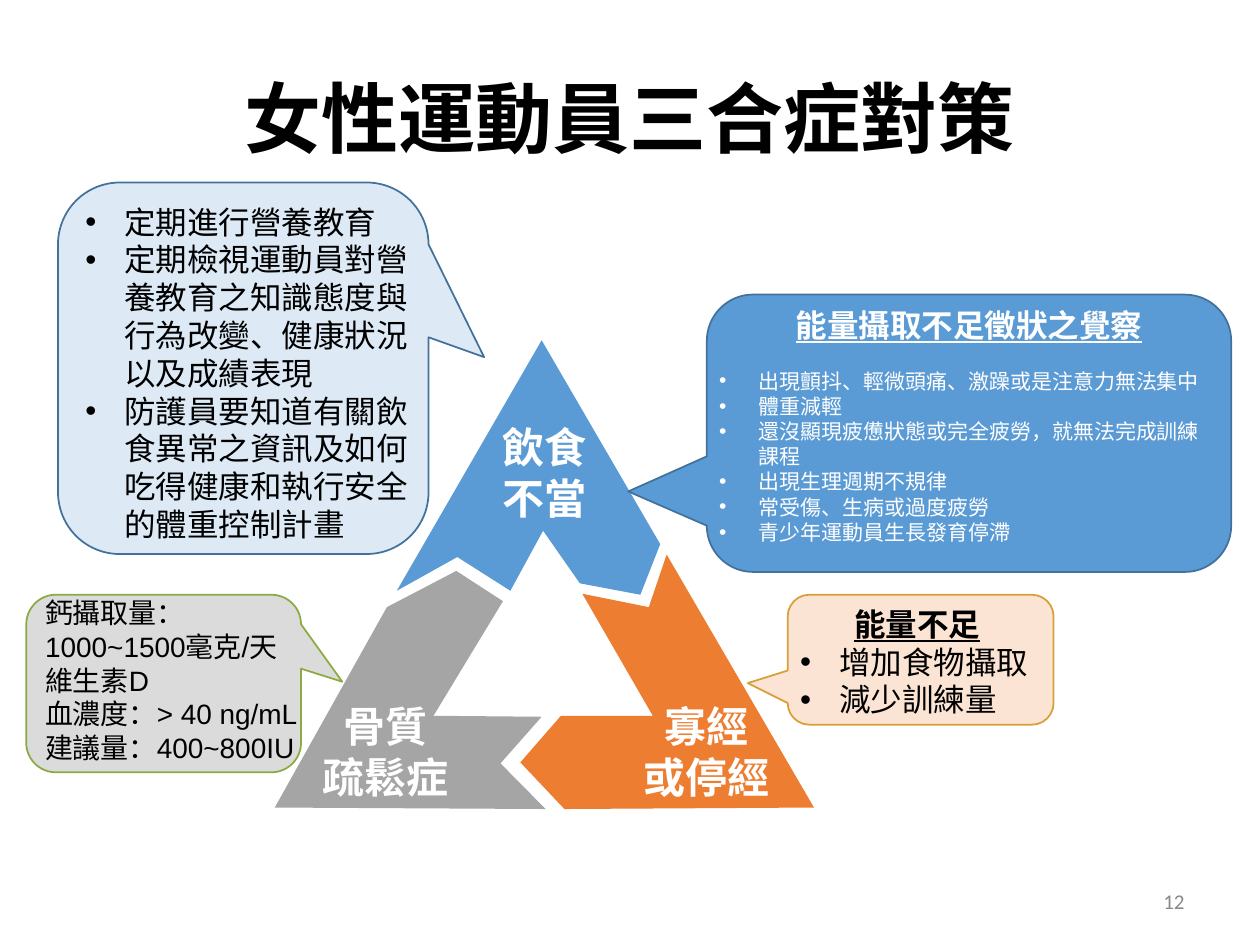
from lxml.etree import SubElement
from pptx import Presentation
from pptx.dml.color import RGBColor
from pptx.enum.shapes import MSO_SHAPE as Shape
from pptx.enum.text import MSO_ANCHOR as Anchor, PP_ALIGN as Align
from pptx.oxml.ns import qn
from pptx.util import Cm, Pt

HANGING = 0.79
BLUE, ORANGE, GRAY = "5B9BD5", "ED7D31", "A5A5A5"
BLACK, WHITE = "000000", "FFFFFF"


def color(value):
    return RGBColor.from_string(value)


def add_bullet(paragraph, ink):
    properties = paragraph._p.get_or_add_pPr()
    properties.set("marL", str(Cm(HANGING)))
    properties.set("indent", str(-Cm(HANGING)))
    bullet_color = SubElement(properties, qn("a:buClr"))
    SubElement(bullet_color, qn("a:srgbClr"), val=ink)
    SubElement(properties, qn("a:buFont"), typeface="Arial")
    SubElement(properties, qn("a:buChar"), char="•")


def write(paragraph, text, size, ink, bold=False, underline=False, font="Arial"):
    for index, line in enumerate(text.split("\n")):
        if index:
            paragraph.add_line_break()
        run = paragraph.add_run()
        run.text = line
        run.font.name = font
        run.font.size = Pt(size)
        run.font.bold = bold
        run.font.underline = underline
        run.font.color.rgb = color(ink)


def add_text_frame(slide, box, anchor=Anchor.TOP):
    frame = slide.shapes.add_textbox(*map(Cm, box)).text_frame
    frame.word_wrap = True
    frame.vertical_anchor = anchor
    return frame


def add_label(slide, box, text, size, ink, align=Align.CENTER, anchor=Anchor.TOP,
              bold=True, font="Arial"):
    paragraph = add_text_frame(slide, box, anchor).paragraphs[0]
    paragraph.alignment = align
    write(paragraph, text, size, ink, bold=bold, font=font)


def add_triangle(slide, left, top):
    arrows = [
        (BLUE, [(2.46, 5.05), (5.38, 0), (7.77, 4.11), (7.37, 5.13),
                (6.15, 4.9), (5.41, 3.84), (4.75, 5.05), (3.68, 4.37)]),
        (ORANGE, [(10.87, 9.42), (7.9, 4.32), (7.54, 5.38), (6.2, 5.11),
                  (7.62, 7.57), (5.77, 7.57), (4.95, 8.51), (5.84, 9.45)]),
        (GRAY, [(2.26, 5.38), (0, 9.42), (5.46, 9.45), (4.55, 8.53),
                (5.38, 7.59), (3.2, 7.57), (4.6, 5.26), (3.66, 4.65)]),
    ]
    labels = [
        ("飲食不當", 4.06, 1.52, 2.77),
        ("寡經\n或停經", 6.98, 7.14, 3.45),
        ("骨質\n疏鬆症", 0.51, 7.14, 3.45),
    ]
    for fill, corners in arrows:
        points = [(Cm(left + x), Cm(top + y)) for x, y in corners]
        builder = slide.shapes.build_freeform(*points[0])
        builder.add_line_segments(points[1:], close=True)
        arrow = builder.convert_to_shape()
        arrow.shadow.inherit = False
        arrow.fill.solid()
        arrow.fill.fore_color.rgb = color(fill)
        arrow.line.fill.background()
    for text, x, y, width in labels:
        add_label(slide, (left + x, top + y, width, 2.31), text, 24, WHITE)


def add_callout(slide, box, text_box, pointer, fill, line, ink, size,
                heading=None, bullets=(), lines=(), heading_gap=0):
    callout = slide.shapes.add_shape(Shape.ROUNDED_RECTANGULAR_CALLOUT, *map(Cm, box))
    callout.shadow.inherit = False
    callout.adjustments[0], callout.adjustments[1] = pointer
    callout.fill.solid()
    callout.fill.fore_color.rgb = color(fill)
    callout.line.color.rgb = color(line)
    callout.line.width = Pt(1)

    x, y, width, height = text_box
    frame = add_text_frame(slide, (box[0] + x, box[1] + y, width, height))
    paragraphs = iter([frame.paragraphs[0]])

    def next_paragraph():
        return next(paragraphs, None) or frame.add_paragraph()

    if heading:
        paragraph = next_paragraph()
        paragraph.alignment = Align.CENTER
        paragraph.space_after = Pt(heading_gap)
        write(paragraph, heading, 18, ink, bold=True, underline=True)
    for text in bullets:
        paragraph = next_paragraph()
        add_bullet(paragraph, ink)
        write(paragraph, text, size, ink)
    for text in lines:
        write(next_paragraph(), text, size, ink)


def build_slide(presentation):
    slide = presentation.slides.add_slide(presentation.slide_layouts[6])
    add_label(slide, (1.27, 0.76, 22.86, 3.18), "女性運動員三合症對策", 44, BLACK,
              anchor=Anchor.MIDDLE)
    add_triangle(slide, 5.54, 6.86)
    add_callout(
        slide, (15.88, 11.99, 5.36, 2.62), (0, 0.08, 5.23, 2.57), (-0.65, 0.18),
        "FBE4D4", "D89F39", BLACK, 18, heading="能量不足",
        bullets=["增加食物攝取", "減少訓練量"])
    add_callout(
        slide, (0.53, 11.99, 5.54, 3.58), (0.13, -0.1, 5.84, 3.68), (0.65, -0.01),
        "DBDBDB", "8BAB42", BLACK, 16,
        lines=["鈣攝取量：1000~1500毫克/天",
               "維生素D\n血濃度：> 40 ng/mL\n建議量：400~800IU"])
    add_callout(
        slide, (1.17, 3.68, 7.47, 7.49), (0.3, 0.28, 7.47, 7.19), (0.65, -0.03),
        "DDEAF6", "42719B", BLACK, 18,
        bullets=["定期進行營養教育",
                 "定期檢視運動員對營養教育之知識態度與行為改變、健康狀況以及成績表現",
                 "防護員要知道有關飲食異常之資訊及如何吃得健康和執行安全的體重控制計畫"])
    add_callout(
        slide, (14.25, 5.94, 10.57, 5.59), (0, 0.1, 10.57, 5.13), (-0.65, 0.21),
        BLUE, "42719B", WHITE, 12, heading="能量攝取不足徵狀之覺察", heading_gap=14,
        bullets=["出現顫抖、輕微頭痛、激躁或是注意力無法集中",
                 "體重減輕",
                 "還沒顯現疲憊狀態或完全疲勞，就無法完成訓練課程",
                 "出現生理週期不規律",
                 "常受傷、生病或過度疲勞",
                 "青少年運動員生長發育停滯"])
    add_label(slide, (18.21, 17.65, 5.92, 1.02), "12", 12, "898989",
              align=Align.RIGHT, anchor=Anchor.MIDDLE, bold=False, font="Calibri")


def main():
    presentation = Presentation()
    presentation.slide_width = Cm(25.4)
    presentation.slide_height = Cm(19.05)
    build_slide(presentation)
    presentation.save("out.pptx")


if __name__ == "__main__":
    main()
